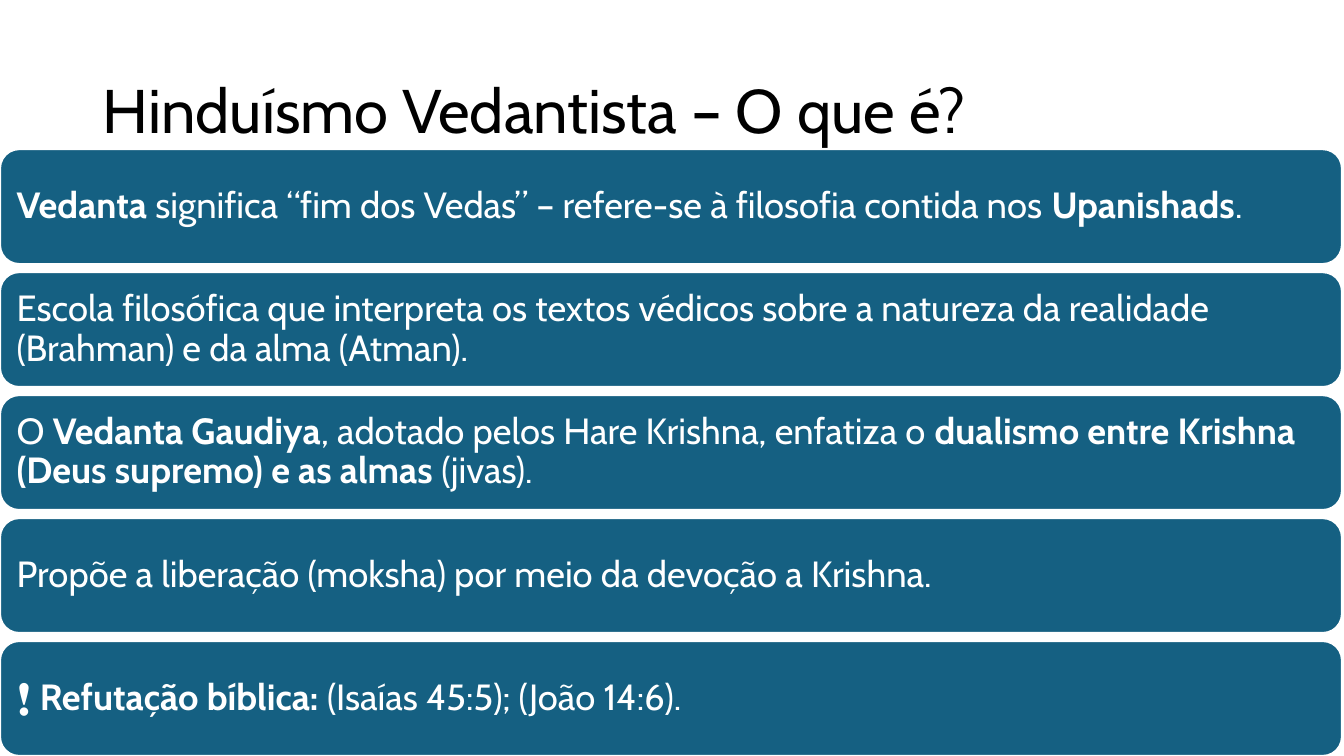
from dataclasses import dataclass

from pptx import Presentation
from pptx.dml.color import RGBColor
from pptx.enum.shapes import MSO_SHAPE as Shape
from pptx.enum.text import MSO_ANCHOR as Anchor, PP_ALIGN as Align
from pptx.slide import Slide
from pptx.text.text import TextFrame
from pptx.util import Inches, Pt

COLORS = {"title": "000000", "bar": "156082", "light": "FFFFFF"}
FONT = "Cabin"
BAR_TOP, BAR_PITCH = 1.48, 1.22
BAR_WIDTH, BAR_HEIGHT = 13.31, 1.14
BAR_INSET = 0.11


@dataclass
class Run:
    text: str
    bold: bool = False


@dataclass
class Statement:
    runs: list[Run]


STATEMENTS = [
    Statement([
        Run("Vedanta", True),
        Run(" significa “fim dos Vedas” – refere-se à filosofia contida nos "),
        Run("Upanishads", True),
        Run("."),
    ]),
    Statement([
        Run("Escola filosófica que interpreta os textos védicos sobre a natureza "
            "da realidade (Brahman) e da alma (Atman)."),
    ]),
    Statement([
        Run("O "),
        Run("Vedanta Gaudiya", True),
        Run(", adotado pelos Hare Krishna, enfatiza o "),
        Run("dualismo entre Krishna (Deus supremo) e as almas", True),
        Run(" (jivas)."),
    ]),
    Statement([Run("Propõe a liberação (moksha) por meio da devoção a Krishna.")]),
    Statement([
        Run("❗ "),
        Run("Refutação bíblica:", True),
        Run(" (Isaías 45:5); (João 14:6)."),
    ]),
]


def color(name: str) -> RGBColor:
    return RGBColor.from_string(COLORS[name])


def write(frame: TextFrame, runs: list[Run], size: int, color_name: str) -> None:
    frame.word_wrap = True
    frame.vertical_anchor = Anchor.MIDDLE
    paragraph = frame.paragraphs[0]
    paragraph.alignment = Align.LEFT
    paragraph.line_spacing = 0.9
    paragraph.font.name = FONT
    paragraph.font.size = Pt(size)
    paragraph.font.color.rgb = color(color_name)
    for part in runs:
        run = paragraph.add_run()
        run.text = part.text
        if part.bold:
            run.font.bold = True


def draw_title(slide: Slide, text: str) -> None:
    title = slide.shapes.add_textbox(
        Inches(0.92), Inches(0.4), Inches(11.5), Inches(1.45))
    write(title.text_frame, [Run(text)], 44, "title")


def draw_statement(slide: Slide, statement: Statement, top: float) -> None:
    bar = slide.shapes.add_shape(
        Shape.ROUNDED_RECTANGLE,
        Inches(0), Inches(top), Inches(BAR_WIDTH), Inches(BAR_HEIGHT))
    bar.shadow.inherit = False
    bar.fill.solid()
    bar.fill.fore_color.rgb = color("bar")
    bar.line.color.rgb = color("light")
    bar.line.width = Pt(1.5)
    frame = bar.text_frame
    frame.margin_left = frame.margin_right = Inches(BAR_INSET)
    frame.margin_top = frame.margin_bottom = Inches(BAR_INSET)
    write(frame, statement.runs, 26, "light")


def main() -> None:
    deck = Presentation()
    deck.slide_width, deck.slide_height = Inches(13.33), Inches(7.5)
    slide = deck.slides.add_slide(deck.slide_layouts[6])

    # Title
    draw_title(slide, "Hinduísmo Vedantista – O que é?")

    # Stack of statements
    for row, statement in enumerate(STATEMENTS):
        draw_statement(slide, statement, BAR_TOP + row * BAR_PITCH)

    deck.save("out.pptx")


if __name__ == "__main__":
    main()
